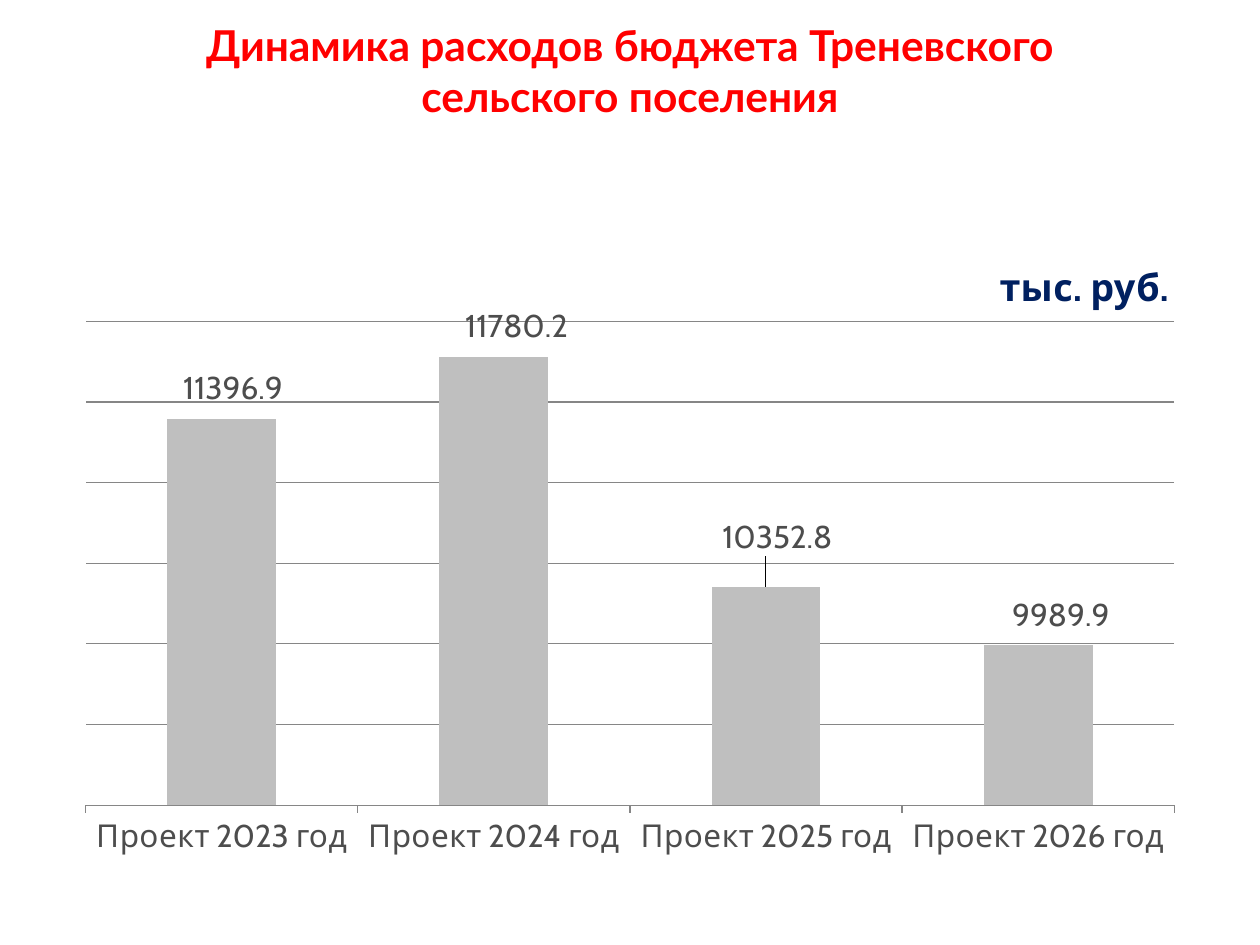
import pptx
import pptx.chart.data
import pptx.dml.color
import pptx.enum.chart
import pptx.enum.text
import pptx.oxml
import pptx.oxml.ns
import pptx.util

Cm, Pt = pptx.util.Cm, pptx.util.Pt
qn = pptx.oxml.ns.qn
kinds = pptx.enum.chart


def paint(target, tone):
    target.rgb = pptx.dml.color.RGBColor.from_string(tone)


def place(parent, spot, **sizes):
    """Give a chart part a manual layout, as child number spot."""
    for old in parent.findall(qn("c:layout")):
        parent.remove(old)
    parts = "".join(f'<c:{key} val="{val}"/>' for key, val in sizes.items())
    parent.insert(spot, pptx.oxml.parse_xml(
        f'<c:layout {pptx.oxml.ns.nsdecls("c")}>'
        f"<c:manualLayout>{parts}</c:manualLayout></c:layout>"))


deck = pptx.Presentation()
deck.slide_width, deck.slide_height = Cm(25.4), Cm(19.05)
slide = deck.slides.add_slide(deck.slide_layouts[5])

# Title
title = slide.shapes.title
title.left, title.top, title.width, title.height = Cm(2.54), Cm(0.43), Cm(20.32), Cm(1.98)
frame = title.text_frame
frame.text = "Динамика расходов бюджета Треневского сельского поселения"
frame.word_wrap = True
frame.auto_size = pptx.enum.text.MSO_AUTO_SIZE.NONE
frame.vertical_anchor = pptx.enum.text.MSO_ANCHOR.MIDDLE
frame.paragraphs[0].alignment = pptx.enum.text.PP_ALIGN.CENTER
font = frame.paragraphs[0].runs[0].font
font.name, font.size, font.bold = "Lato", Pt(24.3), True
paint(font.color, "FF0000")

# Spending by year
data = pptx.chart.data.CategoryChartData()
data.categories = [f"Проект {year} год" for year in range(2023, 2027)]
data.add_series("Series 1", [11396.9, 11780.2, 10352.8, 9989.9])
chart = slide.shapes.add_chart(
    kinds.XL_CHART_TYPE.COLUMN_CLUSTERED,
    Cm(1.27), Cm(4.45), Cm(22.86), Cm(13.08), data).chart
chart.has_legend = False
chart.font.name, chart.font.size = "Cabin", Pt(18)
paint(chart.font.color, "4D4D4D")
place(chart.element.find(".//" + qn("c:plotArea")), 0, layoutTarget="inner",
      xMode="edge", yMode="edge", x=0.02, y=0.155, w=0.96, h=0.746)

# Unit, at the top right
chart.has_title = True
unit = chart.chart_title.text_frame
unit.text = "тыс. руб."
font = unit.paragraphs[0].runs[0].font
font.name, font.size, font.bold = "Cabin", Pt(21.6), True
paint(font.color, "002060")
place(chart.element.find(".//" + qn("c:title")), 1,
      xMode="edge", yMode="edge", x=0.82, y=0.05)

# Axes
scale, years = chart.value_axis, chart.category_axis
scale.minimum_scale, scale.maximum_scale, scale.major_unit = 9000, 12000, 500
scale.has_major_gridlines = True
scale.visible = False
years.major_tick_mark = kinds.XL_TICK_MARK.OUTSIDE
for line in (scale.major_gridlines.format.line, years.format.line):
    line.width = Pt(0.75)
    paint(line.color, "868686")

# Bars and their labels
plot = chart.plots[0]
plot.gap_width = 150
plot.vary_by_categories = False
bars = plot.series[0]
bars.format.fill.solid()
paint(bars.format.fill.fore_color, "BFBFBF")
bars.data_labels.show_value = True
bars.data_labels.number_format = "General"
bars.data_labels.number_format_is_linked = False
shifts = [(0.01, -0.01), (0.02, -0.01), (0.01, -0.04), (0.02, -0.01)]
for num in range(len(shifts)):
    bars.points[num].data_label.position = kinds.XL_LABEL_POSITION.OUTSIDE_END
for label, (x, y) in zip(chart.element.iter(qn("c:dLbl")), shifts):
    place(label, 1, x=x, y=y)

deck.save("out.pptx")
